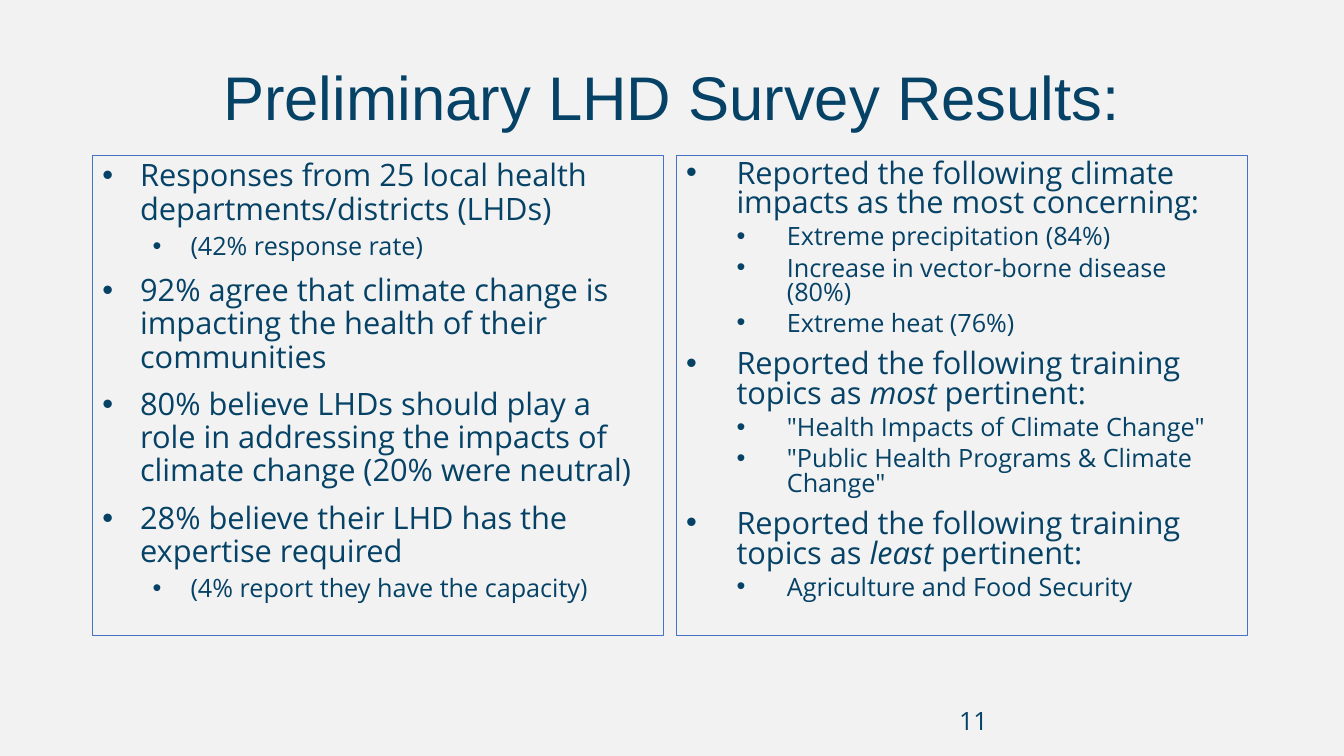
from lxml import etree
from pptx import Presentation
from pptx import util as u
from pptx.dml import color
from pptx.enum import text
from pptx.oxml import ns

PX = 9525
NAVY = "054266"
BODY_FONT = "Open Sans"
LEVEL_SIZES = [22, 18]
LEVEL_SPACES = [10, 5]

survey_findings = [
    (0, "Responses from 25 local health departments/districts (LHDs)"),
    (1, "(42% response rate)"),
    (0, "92% agree that climate change is impacting the health of their communities"),
    (0, "80% believe LHDs should play a role in addressing the impacts of climate change (20% were neutral)"),
    (0, "28% believe their LHD has the expertise required"),
    (1, "(4% report they have the capacity)"),
]
reported_topics = [
    (0, "Reported the following climate impacts as the most concerning:"),
    (1, "Extreme precipitation (84%)"),
    (1, "Increase in vector-borne disease (80%)"),
    (1, "Extreme heat (76%)"),
    (0, "Reported the following training topics as *most* pertinent:"),
    (1, '"Health Impacts of Climate Change"'),
    (1, '"Public Health Programs & Climate Change"'),
    (0, "Reported the following training topics as *least* pertinent:"),
    (1, "Agriculture and Food Security"),
]
panels = [
    (88, 36, 0.9, survey_findings),
    (644, 48, 0.8, reported_topics),
]


def paint(target, value):
    target.rgb = color.RGBColor.from_string(value)


def add_bullet(para, left, hanging):
    props = para._p.get_or_add_pPr()
    props.set("marL", str(left * PX))
    props.set("indent", str(-hanging * PX))
    bullet_color = etree.SubElement(props, ns.qn("a:buClr"))
    etree.SubElement(bullet_color, ns.qn("a:srgbClr"), val=NAVY)
    etree.SubElement(props, ns.qn("a:buFont"), typeface="Arial")
    etree.SubElement(props, ns.qn("a:buChar"), char="•")


deck = Presentation()
deck.slide_width = 1280 * PX
deck.slide_height = 720 * PX
page = deck.slides.add_slide(deck.slide_layouts[5])
page.background.fill.solid()
paint(page.background.fill.fore_color, "F2F2F2")

title = page.shapes.title
title.left, title.top, title.width, title.height = 88 * PX, 26 * PX, 1104 * PX, 139 * PX
title.text_frame.text = "Preliminary LHD Survey Results:"
title.text_frame.auto_size = text.MSO_AUTO_SIZE.NONE
title.text_frame.vertical_anchor = text.MSO_ANCHOR.MIDDLE
para = title.text_frame.paragraphs[0]
para.alignment = text.PP_ALIGN.CENTER
para.line_spacing = 0.9
para.font.size = u.Pt(44)
para.font.name = "Arial"
paint(para.font.color, NAVY)

for left, hanging, spacing, items in panels:
    box = page.shapes.add_textbox(left * PX, 148 * PX, 544 * PX, 457 * PX)
    paint(box.line.color, "4472C4")
    box.line.width = u.Pt(0.75)
    frame = box.text_frame
    frame.word_wrap = True
    for index, (level, wording) in enumerate(items):
        para = frame.add_paragraph() if index else frame.paragraphs[0]
        para.level = level
        add_bullet(para, hanging + 48 * level, hanging)
        para.line_spacing = spacing
        if index:
            para.space_before = u.Pt(LEVEL_SPACES[level])
        for part, phrase in enumerate(wording.split("*")):
            span = para.add_run()
            span.text = phrase
            span.font.size = u.Pt(LEVEL_SIZES[level])
            span.font.name = BODY_FONT
            span.font.italic = part % 2 == 1
            paint(span.font.color, NAVY)

number = page.shapes.add_textbox(904 * PX, 667 * PX, 288 * PX, 38 * PX)
number.text_frame.word_wrap = True
number.text_frame.text = "11"
span = number.text_frame.paragraphs[0].runs[0]
span.font.size = u.Pt(18)
span.font.name = BODY_FONT
paint(span.font.color, NAVY)

deck.save("out.pptx")
